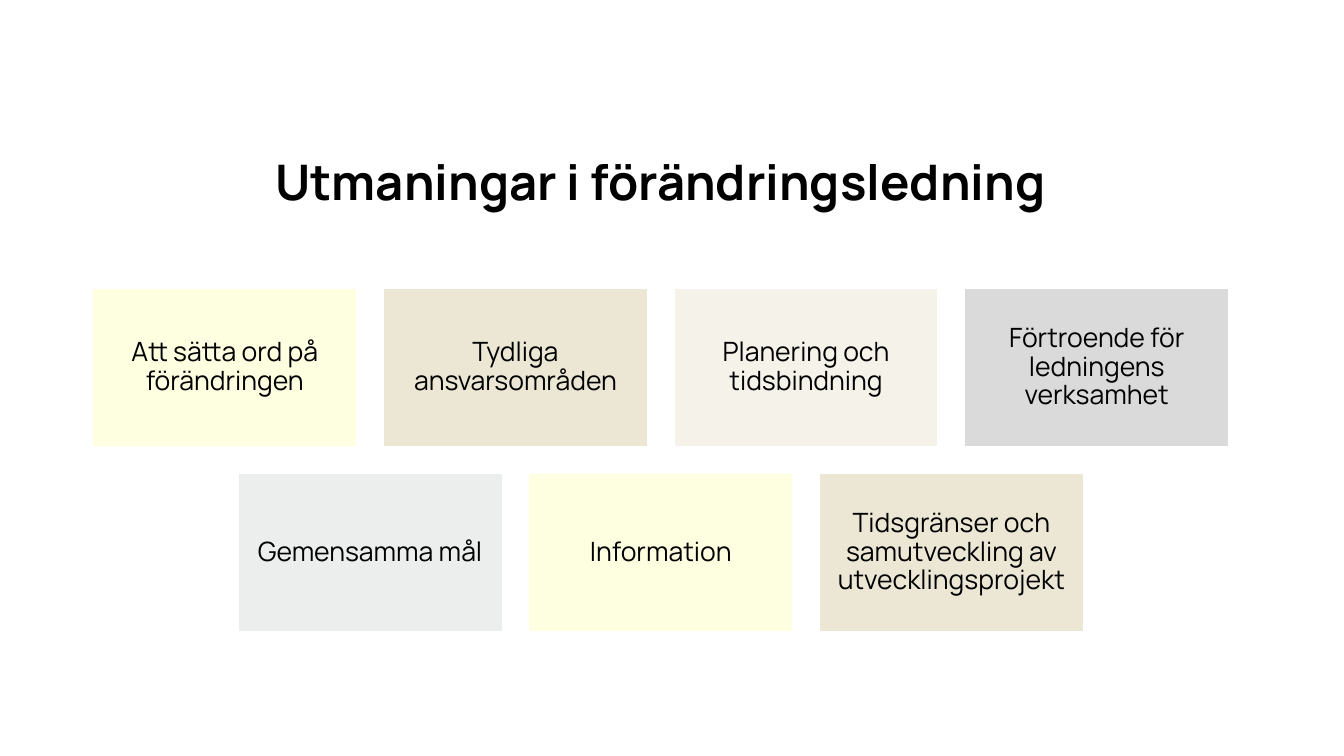
from pptx import Presentation
from pptx.dml.color import RGBColor
from pptx.enum import shapes, text
from pptx.util import Pt

BLACK = RGBColor(0x00, 0x00, 0x00)
WHITE = RGBColor(0xFF, 0xFF, 0xFF)
YELLOW = RGBColor(0xFE, 0xFF, 0xE1)
SAND = RGBColor(0xEC, 0xE7, 0xD5)
CREAM = RGBColor(0xF5, 0xF2, 0xE9)
GREY = RGBColor(0xDA, 0xDA, 0xDA)
MIST = RGBColor(0xEC, 0xED, 0xED)

CENTRE, CARDS_TOP = 472, 205.9
CARD_W, CARD_H, GAP = 188.7, 113.2, 18.9
ROWS = [
    [("Att sätta ord på förändringen", YELLOW),
     ("Tydliga ansvarsområden", SAND),
     ("Planering och tidsbindning", CREAM),
     ("Förtroende för ledningens verksamhet", GREY)],
    [("Gemensamma mål", MIST),
     ("Information", YELLOW),
     ("Tidsgränser och samutveckling av utvecklingsprojekt", SAND)],
]


class Deck:
    """Draws titles and cards in one style on the current slide."""

    font = "Manrope"

    def __init__(self, s):
        self.s = s

    def label(self, sp, words, size, bold=False, inset=5.8):
        tf = sp.text_frame
        tf.text = words
        tf.word_wrap = True
        tf.vertical_anchor = text.MSO_ANCHOR.MIDDLE
        tf.margin_left = tf.margin_right = Pt(inset)
        tf.margin_top = tf.margin_bottom = Pt(inset)
        p = tf.paragraphs[0]
        p.alignment = text.PP_ALIGN.CENTER
        p.line_spacing = 0.9
        r = p.runs[0]
        r.font.name = self.font
        r.font.size = Pt(size)
        r.font.bold = bold
        r.font.color.rgb = BLACK

    def title(self, words, x, y, w, h):
        sp = self.s.shapes.add_textbox(Pt(x), Pt(y), Pt(w), Pt(h))
        self.label(sp, words, 35, bold=True)

    def card(self, words, fill, x, y):
        sp = self.s.shapes.add_shape(shapes.MSO_SHAPE.RECTANGLE,
                                     Pt(x), Pt(y), Pt(CARD_W), Pt(CARD_H))
        sp.shadow.inherit = False
        sp.fill.solid()
        sp.fill.fore_color.rgb = fill
        sp.line.color.rgb = WHITE
        sp.line.width = Pt(1)
        self.label(sp, words, 19)

    def card_row(self, cards, y):
        width = len(cards) * (CARD_W + GAP) - GAP
        for i, (words, fill) in enumerate(cards):
            self.card(words, fill, CENTRE - width / 2 + i * (CARD_W + GAP), y)


def main():
    prs = Presentation()
    prs.slide_width, prs.slide_height = Pt(960), Pt(540)
    deck = Deck(prs.slides.add_slide(prs.slide_layouts[6]))
    deck.title("Utmaningar i förändringsledning", CENTRE - 406, 79.9, 812, 104.4)
    for i, cards in enumerate(ROWS):
        deck.card_row(cards, CARDS_TOP + i * (CARD_H + GAP))
    prs.save("out.pptx")


if __name__ == "__main__":
    main()
